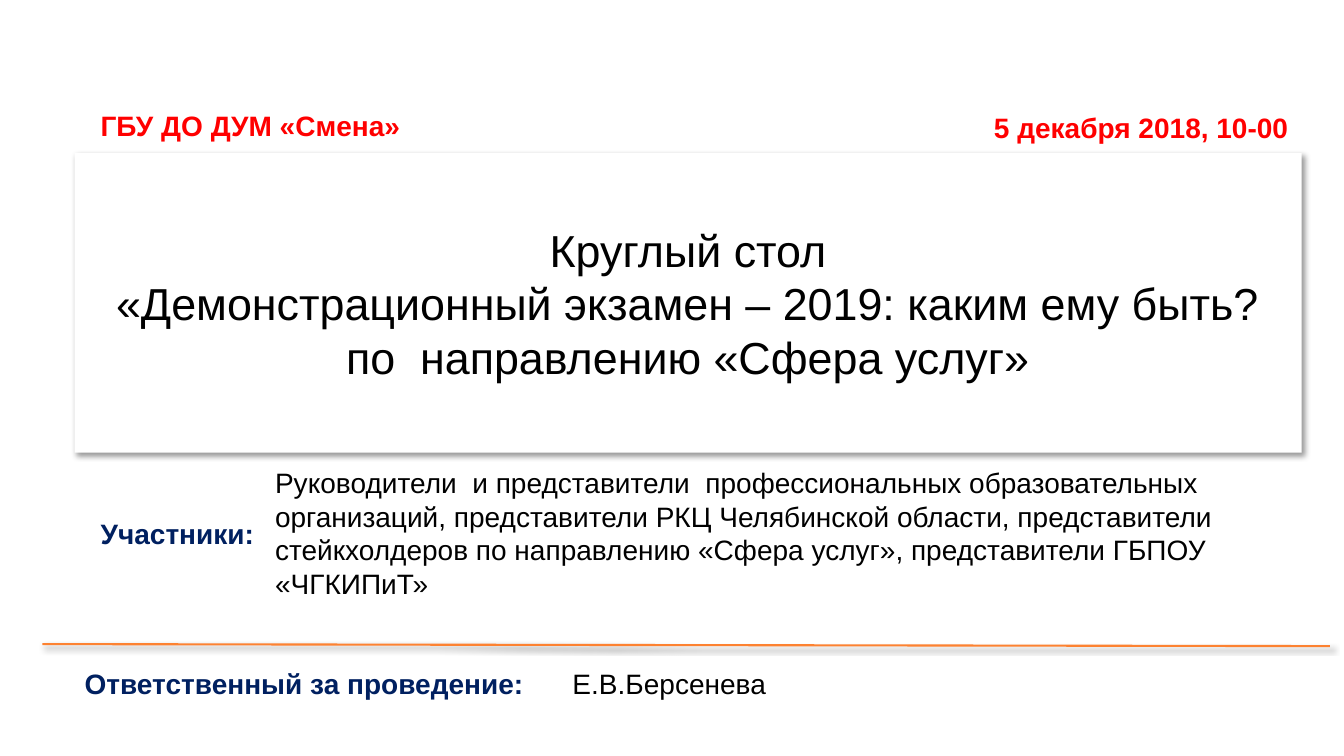
from pptx import Presentation
from pptx.dml.color import RGBColor
from pptx.enum.shapes import MSO_CONNECTOR, MSO_SHAPE
from pptx.enum.text import MSO_ANCHOR, PP_ALIGN
from pptx.oxml import parse_xml
from pptx.oxml.ns import nsdecls
from pptx.util import Inches, Pt

RECT, STRAIGHT = MSO_SHAPE.RECTANGLE, MSO_CONNECTOR.STRAIGHT
MIDDLE, CENTER = MSO_ANCHOR.MIDDLE, PP_ALIGN.CENTER

# Content
BLACK, WHITE, RED, NAVY, ORANGE = "000000", "FFFFFF", "FF0000", "002060", "FD8231"
FONT = "Arial"

TITLE_LINES = [
    "Круглый стол",
    "«Демонстрационный экзамен – 2019: каким ему быть?",
    "по  направлению «Сфера услуг»",
]
PARTICIPANTS = (
    "Руководители  и представители  профессиональных образовательных "
    "организаций, представители РКЦ Челябинской области, представители "
    "стейкхолдеров по направлению «Сфера услуг», представители ГБПОУ «ЧГКИПиТ»"
)

# Text, (left, top, width, height), colour, bold, wrap
LABELS = [
    ("5 декабря 2018, 10-00", (9.76, 1.05, 3.14, 0.44), RED, True, False),
    (PARTICIPANTS, (2.63, 4.57, 10.7, 1.45), BLACK, False, True),
    ("Участники:", (0.9, 5.07, 1.74, 0.44), NAVY, True, False),
    ("Ответственный за проведение:", (0.74, 6.56, 4.59, 0.44), NAVY, True, False),
    ("Е.В.Берсенева", (5.58, 6.56, 6.67, 0.44), BLACK, False, True),
    ("ГБУ ДО ДУМ «Смена»", (0.9, 1.03, 3.2, 0.44), RED, True, False),
]


def color(hex_code):
    return RGBColor.from_string(hex_code)


def set_font(paragraph, size, hex_code, bold=False):
    font = paragraph.font
    font.name, font.size, font.bold = FONT, Pt(size), bold
    font.color.rgb = color(hex_code)


def add_soft_shadow(shape):
    """Black shadow, 40 % opaque, falling to the lower right."""
    shape._element.spPr.append(parse_xml(
        f'<a:effectLst {nsdecls("a")}>'
        f'<a:outerShdw blurRad="{Pt(4)}" dist="{Pt(3)}" dir="{45 * 60000}" '
        'algn="tl" rotWithShape="0">'
        f'<a:srgbClr val="{BLACK}"><a:alpha val="40000"/></a:srgbClr>'
        '</a:outerShdw></a:effectLst>'))


prs = Presentation()
prs.slide_width, prs.slide_height = Inches(13.33), Inches(7.5)
slide = prs.slides.add_slide(prs.slide_layouts[6])

# Title panel
panel = slide.shapes.add_shape(RECT, *map(Inches, (0.74, 1.52, 12.17, 2.97)))
panel.fill.solid()
panel.fill.fore_color.rgb = color(WHITE)
panel.line.fill.background()
add_soft_shadow(panel)
panel.text_frame.vertical_anchor = MIDDLE
title = panel.text_frame.paragraphs[0]
title.text = "\v".join(TITLE_LINES)
title.alignment = CENTER
set_font(title, 32, BLACK)

# Divider
divider = slide.shapes.add_connector(STRAIGHT, *map(Inches, (0.42, 6.39, 13.19, 6.41)))
divider.line.color.rgb = color(ORANGE)
divider.line.width = Pt(1.5)
add_soft_shadow(divider)

# Labels and details
for text, place, hex_code, bold, wrap in LABELS:
    frame = slide.shapes.add_textbox(*map(Inches, place)).text_frame
    frame.word_wrap = wrap
    frame.text = text
    set_font(frame.paragraphs[0], 20, hex_code, bold)

prs.save("out.pptx")
